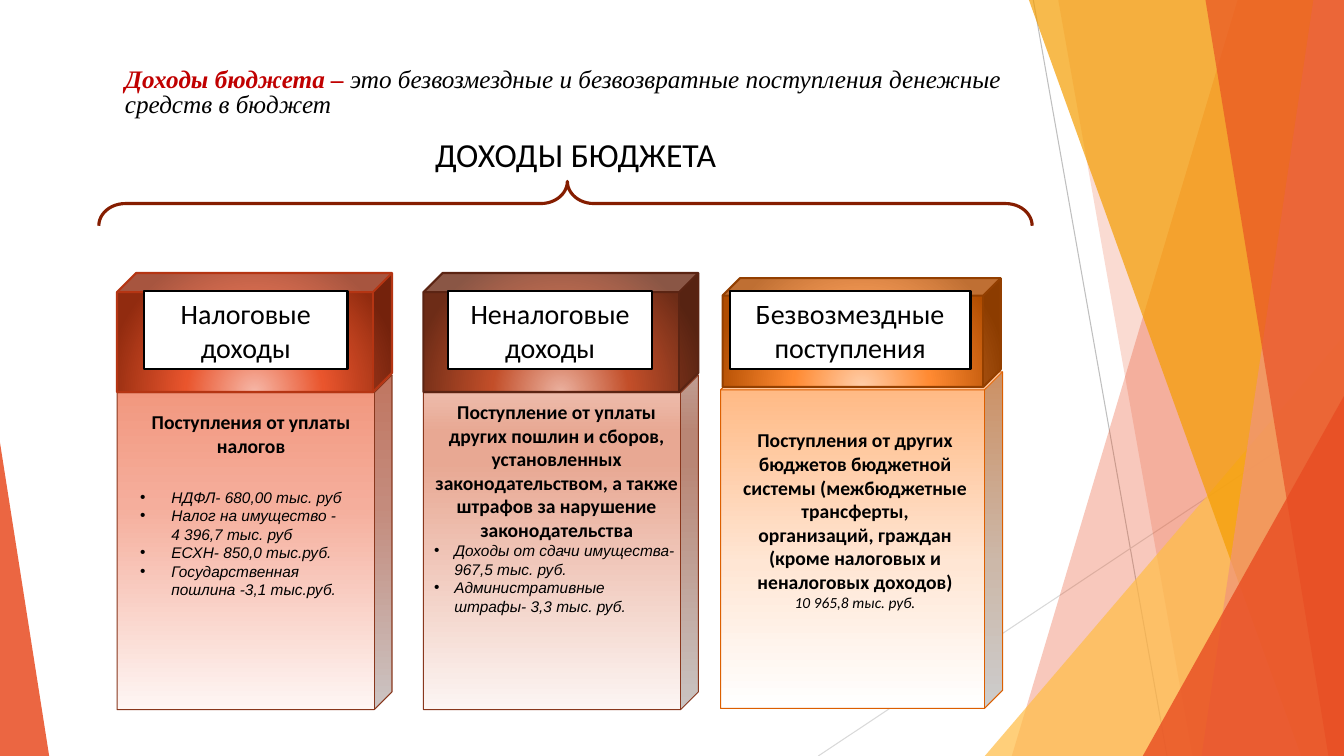
from lxml import etree
from pptx import Presentation
from pptx.dml.color import RGBColor
from pptx.enum.shapes import MSO_CONNECTOR, MSO_SHAPE
from pptx.enum.text import PP_ALIGN
from pptx.oxml.ns import qn
from pptx.util import Cm, Pt

CENTER, LEFT = PP_ALIGN.CENTER, PP_ALIGN.LEFT
CUBE, RECTANGLE = MSO_SHAPE.CUBE, MSO_SHAPE.RECTANGLE
TRIANGLE, BRACE = MSO_SHAPE.ISOSCELES_TRIANGLE, MSO_SHAPE.LEFT_BRACE
STRAIGHT = MSO_CONNECTOR.STRAIGHT

WIDTH, HEIGHT = 33.87, 19.05
BLACK = RGBColor(0x00, 0x00, 0x00)
WHITE = RGBColor(0xFF, 0xFF, 0xFF)
DARK_RED = RGBColor(0xC0, 0x00, 0x00)
BRACE_RED = RGBColor(0x85, 0x1D, 0x00)
BODY_EDGE = RGBColor(0x88, 0x37, 0x1D)
ORANGE_EDGE = RGBColor(0xDC, 0x5F, 0x00)
RED_CAP_EDGE = RGBColor(0xB5, 0x35, 0x13)
BROWN_CAP_EDGE = RGBColor(0x5B, 0x24, 0x13)
ORANGE_CAP_EDGE = RGBColor(0x93, 0x3F, 0x00)
GRAY = RGBColor(0xBF, 0xBF, 0xBF)
LIGHT_GRAY = RGBColor(0xD9, 0xD9, 0xD9)
RED = RGBColor(0xE8, 0x4C, 0x22)
SALMON = RGBColor(0xF1, 0x94, 0x7A)
AMBER = RGBColor(0xF4, 0x9D, 0x00)
YELLOW = RGBColor(0xFF, 0xBD, 0x47)

COLUMNS = [
    dict(
        box=(2.95, 6.88, 6.93, 11), cap_height=3, body_top=2.57,
        body_stops=[(0, "FEF6F4"), (61, "F5AE9C"), (100, "F1947A")],
        cap_stops=[(0, "F6B7A7"), (46, "E9552D"), (100, "912B0F")],
        body_edge=BODY_EDGE, cap_edge=RED_CAP_EDGE,
        label="Налоговые доходы", label_box=(0.68, 0.46, 5.13, 1.96),
        text_box=(0.33, 3.33, 6.1, 6.02),
        heading="Поступления от уплаты налогов", gap=22, indent=0.79,
        items=["НДФЛ- 680,00 тыс. руб", "Налог на имущество -\n4 396,7 тыс. руб",
               "ЕСХН- 850,0 тыс.руб.", "Государственная пошлина -3,1 тыс.руб."],
    ),
    dict(
        box=(10.67, 6.88, 6.93, 11), cap_height=3, body_top=2.57,
        body_stops=[(0, "FCF5F3"), (74, "E8A893"), (83, "E8A893"), (100, "F0C5B7")],
        cap_stops=[(0, "EBB19F"), (46, "C24E29"), (100, "6D2C17")],
        body_edge=BODY_EDGE, cap_edge=BROWN_CAP_EDGE,
        label="Неналоговые доходы", label_box=(0.63, 0.46, 5.13, 1.96),
        text_box=(0.02, 3.08, 6.68, 7.62),
        heading="Поступление от уплаты других пошлин и сборов, установленных "
                "законодательством, а также штрафов за нарушение законодательства",
        indent=0.51,
        items=["Доходы от сдачи имущества- 967,5 тыс. руб.",
               "Административные штрафы- 3,3 тыс. руб."],
    ),
    dict(
        box=(18.16, 7.01, 7.11, 10.84), cap_height=2.74, body_top=2.36, cap_inset=0.05,
        body_stops=[(0, "FFFFFF"), (43, "FFE6D4"), (100, "FFB57D")],
        cap_stops=[(0, "FFCEA9"), (46, "FF8A32"), (100, "B04C00")],
        body_edge=ORANGE_EDGE, cap_edge=ORANGE_CAP_EDGE,
        label="Безвозмездные поступления", label_box=(0.23, 0.33, 6.07, 1.96),
        text_box=(0.28, 3.66, 6.22, 6.71),
        heading="Поступления от других бюджетов бюджетной системы (межбюджетные "
                "трансферты, организаций, граждан (кроме налоговых и неналоговых доходов)",
        amount="10 965,8 тыс. руб.",
    ),
]


def lengths(box):
    return [Cm(value) for value in box]


def inside(box, offset):
    return box[0] + offset[0], box[1] + offset[1], offset[2], offset[3]


def write(paragraph, text, size=14, font="Calibri", color=BLACK, bold=False, italic=False,
          align=None, spacing=None, after=0, indent=0, bullet=False):
    for index, line in enumerate(text.split("\n")):
        if index:
            paragraph.add_line_break()
        run = paragraph.add_run()
        run.text = line
        run.font.size, run.font.name = Pt(size), font
        run.font.color.rgb = color
        run.font.bold, run.font.italic = bold, italic
    if align is not None:
        paragraph.alignment = align
    if spacing:
        paragraph.line_spacing = spacing
    if after:
        paragraph.space_after = Pt(after)
    properties = paragraph._p.get_or_add_pPr()
    if indent:
        properties.set("marL", str(Cm(indent)))
    if bullet:
        properties.set("indent", str(-Cm(indent)))
        etree.SubElement(properties, qn("a:buFont")).set("typeface", "Arial")
        etree.SubElement(properties, qn("a:buChar")).set("char", "•")


def add_text_frame(slide, box):
    frame = slide.shapes.add_textbox(*lengths(box)).text_frame
    frame.word_wrap = True
    return frame


def add_preset(slide, kind, box, adjustments=(), edge=None, edge_width=0.75):
    shape = slide.shapes.add_shape(kind, *lengths(box))
    shape.shadow.inherit = False
    for index, value in enumerate(adjustments):
        shape.adjustments[index] = value
    if edge is None:
        shape.line.fill.background()
    else:
        shape.line.color.rgb, shape.line.width = edge, Pt(edge_width)
    return shape


def fill_translucent(shape, color, opacity):
    shape.fill.solid()
    shape.fill.fore_color.rgb = color
    color_element = shape._element.spPr.find(qn("a:solidFill"))[0]
    etree.SubElement(color_element, qn("a:alpha")).set("val", str(opacity * 1000))


def fill_gradient(shape, stops, radial=False):
    shape.fill.gradient()
    gradient = shape._element.spPr.find(qn("a:gradFill"))
    for child in list(gradient):
        gradient.remove(child)
    stop_list = etree.SubElement(gradient, qn("a:gsLst"))
    for position, color in stops:
        stop = etree.SubElement(stop_list, qn("a:gs"), pos=str(position * 1000))
        etree.SubElement(stop, qn("a:srgbClr"), val=color)
    if radial:
        direction = etree.SubElement(gradient, qn("a:path"), path="circle")
        etree.SubElement(direction, qn("a:fillToRect"),
                         l="50000", t="130000", r="50000", b="-30000")
    else:
        etree.SubElement(gradient, qn("a:lin"), ang="16200000", scaled="0")


def add_facet(slide, top_left, bottom_left, color, opacity):
    builder = slide.shapes.build_freeform(Cm(top_left), 0)
    corners = [(WIDTH, 0), (WIDTH, HEIGHT), (bottom_left, HEIGHT)]
    builder.add_line_segments([(Cm(x), Cm(y)) for x, y in corners])
    facet = builder.convert_to_shape()
    facet.shadow.inherit = False
    facet.line.fill.background()
    fill_translucent(facet, color, opacity)


def add_corner(slide, left, top, width, apex, color, opacity):
    corner = add_preset(slide, TRIANGLE, (left, top, width, HEIGHT - top), [apex])
    fill_translucent(corner, color, opacity)


def add_backdrop(slide):
    for ends, color in [((26.04, 0, 29.41, HEIGHT), GRAY),
                        ((WIDTH, 10.24, 20.62, HEIGHT), LIGHT_GRAY)]:
        line = slide.shapes.add_connector(STRAIGHT, *lengths(ends))
        line.line.color.rgb, line.line.width = color, Pt(0.75)
        etree.SubElement(line._element.spPr, qn("a:effectLst"))
    add_facet(slide, 31.19, 25.5, RED, 30)
    add_facet(slide, 26.67, 30.05, RED, 20)
    add_corner(slide, 24.82, 8.46, 9.05, 1, YELLOW, 72)
    add_facet(slide, 25.93, 32.79, AMBER, 70)
    add_facet(slide, 33.1, 30.28, SALMON, 70)
    add_facet(slide, 30.38, 33.48, RED, 65)
    add_corner(slide, 28.8, 9.98, 5.07, 1, RED, 80)
    add_corner(slide, 0, 11.15, 1.24, 0, RED, 85)


def add_header(slide, box):
    definition = add_text_frame(slide, inside(box, (0, 0, 25.25, 1.5))).paragraphs[0]
    style = dict(size=18, font="Times New Roman", italic=True, spacing=0.8, indent=1.27)
    write(definition, "Доходы бюджета – ", color=DARK_RED, bold=True, **style)
    write(definition, "это безвозмездные и безвозвратные поступления денежные "
          "средств в бюджет", **style)
    title = add_text_frame(slide, inside(box, (7.21, 1.47, 10.06, 1.45))).paragraphs[0]
    write(title, "ДОХОДЫ БЮДЖЕТА", size=24, align=CENTER, spacing=1.15, indent=1.27)


def add_brace(slide, box):
    left, top, width, height = box
    upright = (left + (width - height) / 2, top + (height - width) / 2, height, width)
    brace = add_preset(slide, BRACE, upright, [0.596, 0.498], BRACE_RED, 2.25)
    brace.fill.background()
    brace.rotation = 90


def add_column(slide, box, cap_height, body_top, body_stops, cap_stops, body_edge, cap_edge,
               label, label_box, text_box, heading, gap=0, indent=0, items=(),
               amount=None, cap_inset=0):
    width, height = box[2:]
    body_box = inside(box, (0, body_top, width, height - body_top))
    body = add_preset(slide, CUBE, body_box, [0.064], body_edge)
    fill_gradient(body, body_stops)
    cap_box = inside(box, (cap_inset, 0, width - 2 * cap_inset, cap_height))
    cap = add_preset(slide, CUBE, cap_box, [0.161], cap_edge, 1.5)
    fill_gradient(cap, cap_stops, radial=True)
    plate = add_preset(slide, RECTANGLE, inside(box, label_box), edge=BLACK, edge_width=1.5)
    plate.fill.solid()
    plate.fill.fore_color.rgb = WHITE
    write(plate.text_frame.paragraphs[0], label, size=20, align=CENTER)
    frame = add_text_frame(slide, inside(box, text_box))
    write(frame.paragraphs[0], heading, bold=True, align=CENTER, after=gap)
    for item in items:
        write(frame.add_paragraph(), item, size=11, font="Arial", italic=True,
              align=LEFT, indent=indent, bullet=True)
    if amount:
        write(frame.add_paragraph(), amount, size=11, italic=True, align=CENTER)


def main():
    presentation = Presentation()
    presentation.slide_width, presentation.slide_height = Cm(WIDTH), Cm(HEIGHT)
    slide = presentation.slides.add_slide(presentation.slide_layouts[6])
    add_backdrop(slide)
    add_header(slide, (1.63, 1.63, 25.25, 2.92))
    add_brace(slide, (2.49, 4.57, 23.52, 1.12))
    for column in COLUMNS:
        add_column(slide, **column)
    presentation.save("out.pptx")


if __name__ == "__main__":
    main()
